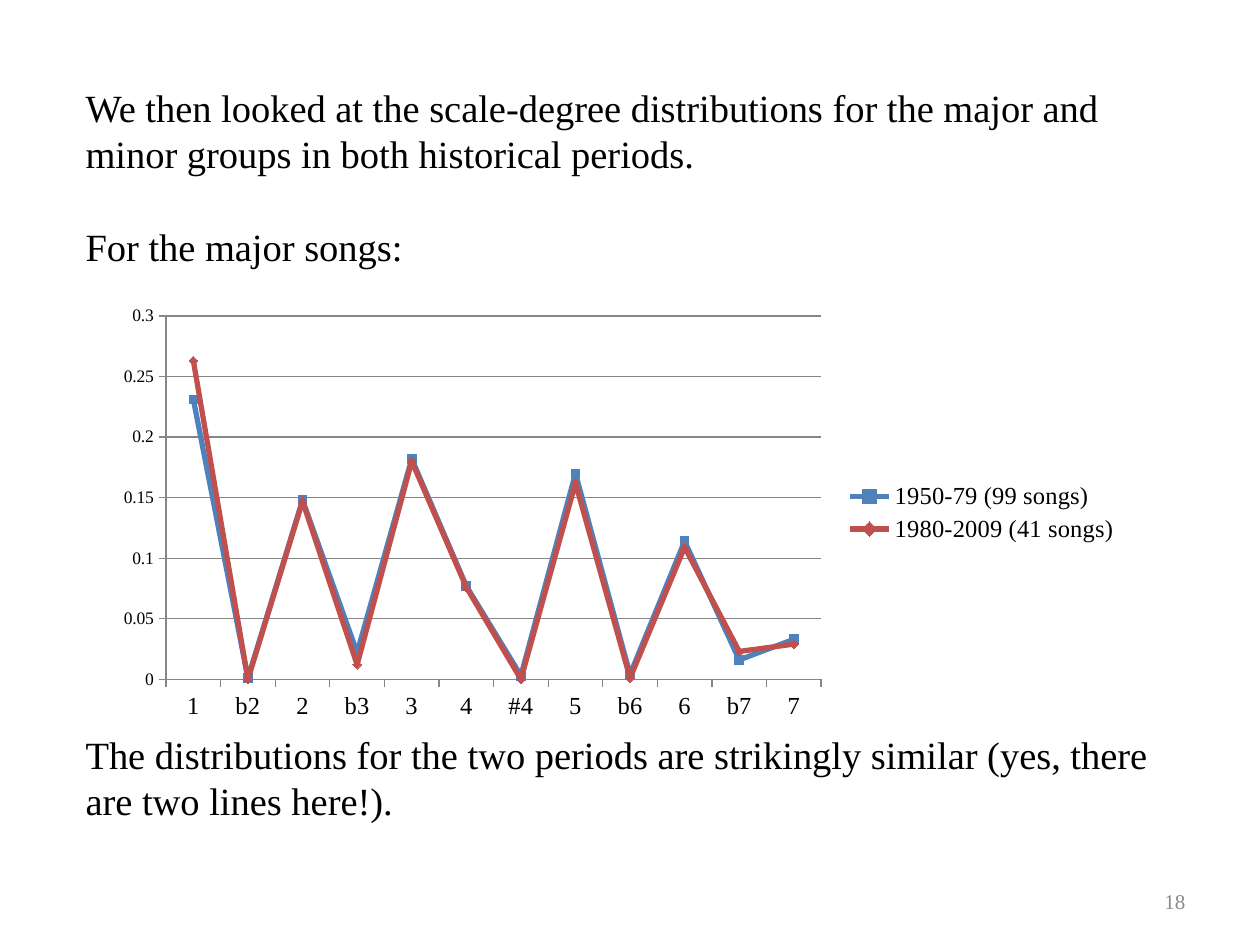
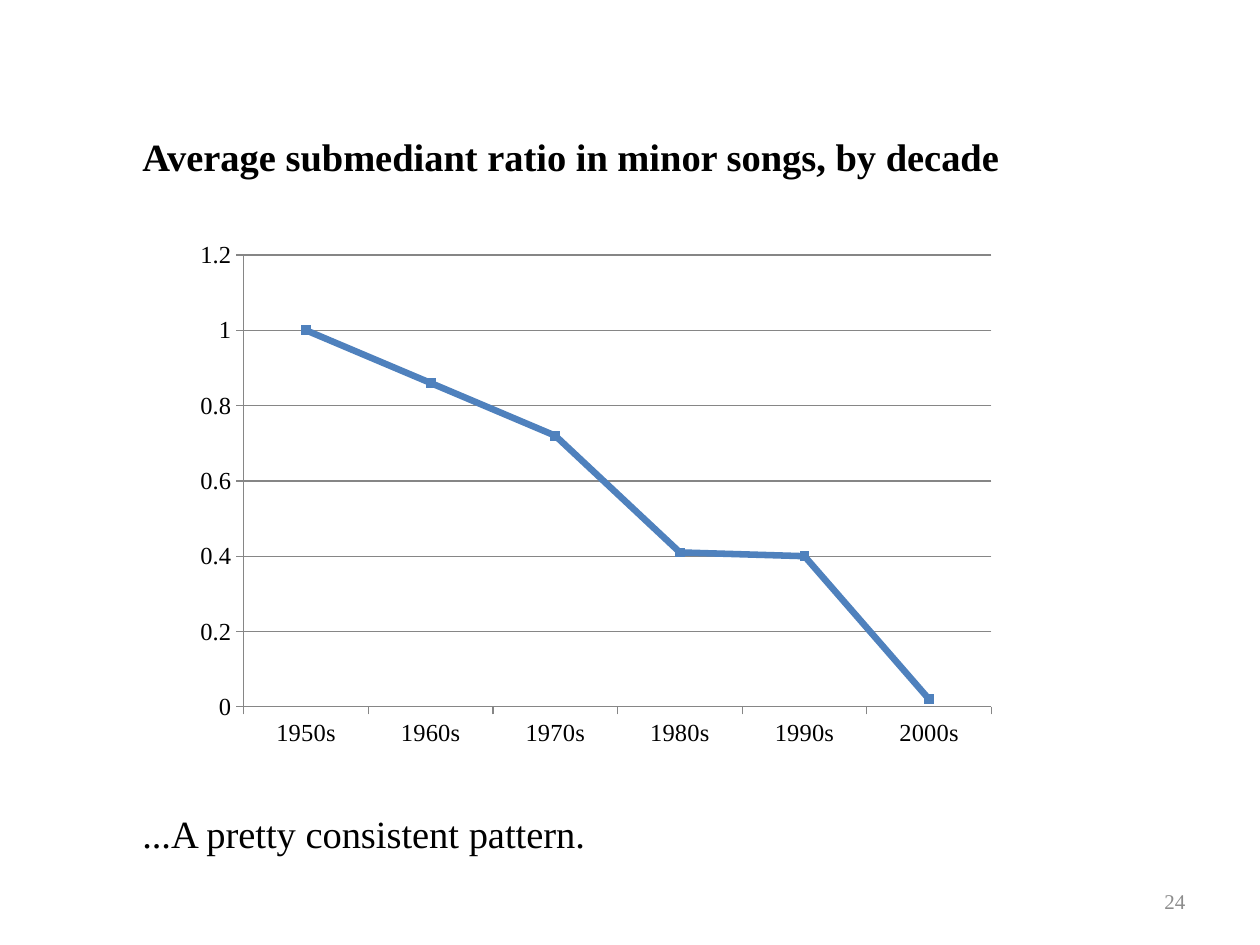
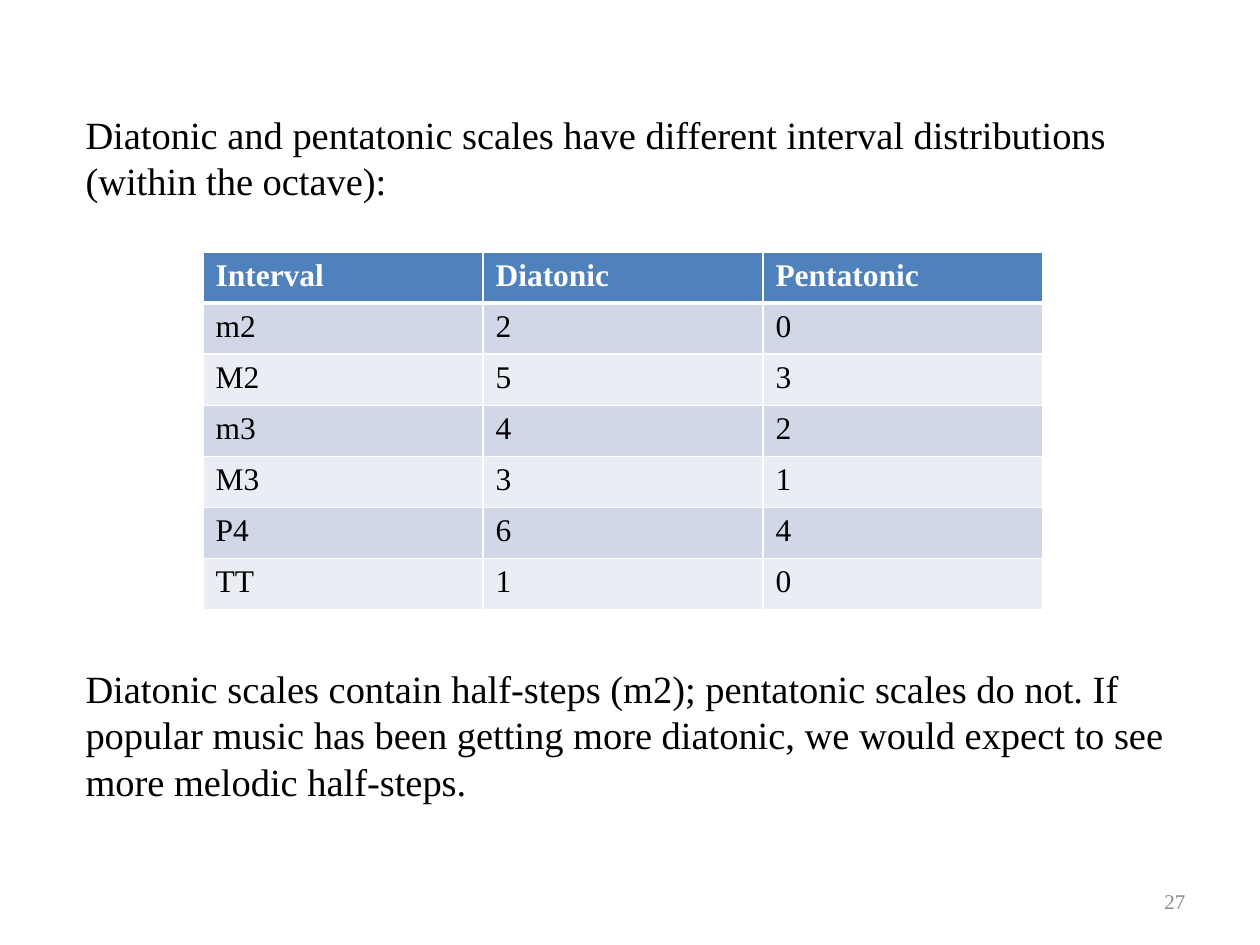
from lxml.etree import SubElement
from pptx import Presentation
from pptx.chart.data import CategoryChartData
from pptx.dml.color import RGBColor
from pptx.enum.chart import XL_CHART_TYPE as CT, XL_LEGEND_POSITION as LP
from pptx.enum.chart import XL_MARKER_STYLE as MS, XL_TICK_MARK as TM
from pptx.enum.text import MSO_ANCHOR as MA, PP_ALIGN as PA
from pptx.oxml.ns import qn
from pptx.util import Pt

# Shared style
BLACK, WHITE, GREY, AXIS = "000000", "FFFFFF", "8C8C8C", "868686"
BLUE, RED = "4F81BD", "C0504D"
BANDS = ("D0D8E8", "E9EDF4")
LINE = 26.4  # height of one line of body text


def rgb(hex_color):
    return RGBColor.from_string(hex_color)


class Deck:
    font = "Times New Roman"
    series_style = ((BLUE, MS.SQUARE), (RED, MS.DIAMOND))

    def __init__(self):
        self.prs = Presentation()
        self.prs.slide_width, self.prs.slide_height = Pt(720), Pt(540)

    def new_slide(self, number):
        self.s = self.prs.slides.add_slide(self.prs.slide_layouts[6])
        p = self.box(516.4, 500.5, 168, 28.8, MA.MIDDLE).paragraphs[0]
        p.alignment = PA.RIGHT
        self.run(p, str(number), size=12, color=GREY)

    def style(self, font, size, color=BLACK, bold=False):
        fmt = {"name": self.font, "size": Pt(size), "bold": bold}
        for key, value in fmt.items():
            setattr(font, key, value)
        font.color.rgb = rgb(color)

    def run(self, p, text, size=22, **fmt):
        r = p.add_run()
        r.text = text
        self.style(r.font, size, **fmt)

    def box(self, x, y, w, h, anchor=MA.TOP):
        tf = self.s.shapes.add_textbox(Pt(x), Pt(y), Pt(w), Pt(h)).text_frame
        tf.word_wrap, tf.vertical_anchor = True, anchor
        return tf

    def body(self, x, y, w, h, *paras):
        """Each paragraph is (text, space before, bold)."""
        tf = self.box(x, y, w, h)
        for i, (text, gap, bold) in enumerate(paras):
            p = tf.add_paragraph() if i else tf.paragraphs[0]
            p.line_spacing, p.space_before = Pt(LINE), Pt(gap)
            self.run(p, text, bold=bold)

    def line_chart(self, x, y, w, h, cats, series, value_size=14,
                   width=3, legend=False):
        data = CategoryChartData()
        data.categories = cats
        for name, values in series.items():
            data.add_series(name, values)
        chart = self.s.shapes.add_chart(
            CT.LINE_MARKERS, Pt(x), Pt(y), Pt(w), Pt(h), data).chart
        self.style(chart.font, 10)
        chart.has_title, chart.has_legend = False, legend
        if legend:
            chart.legend.position = LP.RIGHT
            chart.legend.include_in_layout = False
            self.style(chart.legend.font, 14)

        # Axes
        val = chart.value_axis
        val.has_major_gridlines = True
        lines = [val.major_gridlines.format.line]
        for axis, size in ((chart.category_axis, 14), (val, value_size)):
            axis.major_tick_mark, axis.minor_tick_mark = TM.OUTSIDE, TM.NONE
            self.style(axis.tick_labels.font, size)
            lines.append(axis.format.line)
        for line in lines:
            line.color.rgb, line.width = rgb(AXIS), Pt(0.75)

        # Series
        plot = chart.plots[0]
        plot.vary_by_categories = False
        for ser, (color, symbol) in zip(plot.series, self.series_style):
            ser.smooth = False
            line, marker = ser.format.line, ser.marker
            line.color.rgb, line.width = rgb(color), Pt(width)
            marker.style, marker.size = symbol, 5
            marker.format.fill.solid()
            marker.format.fill.fore_color.rgb = rgb(color)
            marker.format.line.color.rgb = rgb(color)

    def border(self, cell, bottom):
        tc_pr = cell._tc.get_or_add_tcPr()
        for side, width in (("L", 1), ("R", 1), ("T", 1), ("B", bottom)):
            ln = SubElement(tc_pr, qn("a:ln" + side), w=str(Pt(width)))
            SubElement(SubElement(ln, qn("a:solidFill")),
                       qn("a:srgbClr"), val=WHITE)

    def table(self, x, y, col_w, row_h, rows):
        n, m = len(rows), len(rows[0])
        tbl = self.s.shapes.add_table(
            n, m, Pt(x), Pt(y), Pt(col_w * m), Pt(row_h * n)).table
        for i, row in enumerate(rows):
            head = i == 0
            tbl.rows[i].height = Pt(row_h)
            for j, text in enumerate(row):
                tbl.columns[j].width = Pt(col_w)
                cell = tbl.cell(i, j)
                self.border(cell, 3 if i == 0 else 1)
                cell.fill.solid()
                cell.fill.fore_color.rgb = rgb(
                    BLUE if head else BANDS[(i - 1) % 2])
                self.run(cell.text_frame.paragraphs[0], text, size=18,
                         color=WHITE if head else BLACK, bold=head)


def main():
    d = Deck()

    # Major songs in both periods
    d.new_slide(18)
    d.body(41.8, 44.6, 630, 433.4,
           ("We then looked at the scale-degree distributions for the major "
            "and minor groups in both historical periods.", 0, False),
           ("For the major songs:", LINE, False),
           ("The distributions for the two periods are strikingly similar "
            "(yes, there are two lines here!).", 10 * LINE, False))
    d.line_chart(
        59, 170, 588, 246,
        ["1", "b2", "2", "b3", "3", "4", "#4", "5", "b6", "6", "b7", "7"],
        {"1950-79 (99 songs)": (0.231, 0.001, 0.148, 0.022, 0.182, 0.077,
                                0.003, 0.17, 0.004, 0.114, 0.016, 0.033),
         "1980-2009 (41 songs)": (0.263, 0, 0.147, 0.012, 0.18, 0.076,
                                  0, 0.162, 0.001, 0.109, 0.023, 0.029)},
        value_size=10, legend=True)

    # Submediant ratio by decade
    d.new_slide(24)
    d.body(74.2, 72.7, 588, 424,
           ("Average submediant ratio in minor songs, by decade", 0, True),
           ("...A pretty consistent pattern.", 360, False))
    d.line_chart(105, 131.8, 471, 301,
                 [f"{year}s" for year in range(1950, 2001, 10)],
                 {"Series 1": (1, 0.86, 0.72, 0.41, 0.4, 0.02)}, width=3.75)

    # Interval counts
    d.new_slide(27)
    d.body(41.8, 59.8, 648, 406.8,
           ("Diatonic and pentatonic scales have different interval "
            "distributions (within the octave):", 0, False),
           ("Diatonic scales contain half-steps (m2); pentatonic scales do "
            "not. If popular music has been getting more diatonic, we would "
            "expect to see more melodic half-steps.", 10 * LINE, False))
    d.table(116, 144, 160, 29.2, [
        ("Interval", "Diatonic", "Pentatonic"),
        ("m2", "2", "0"),
        ("M2", "5", "3"),
        ("m3", "4", "2"),
        ("M3", "3", "1"),
        ("P4", "6", "4"),
        ("TT", "1", "0")])

    d.prs.save("out.pptx")


if __name__ == "__main__":
    main()
